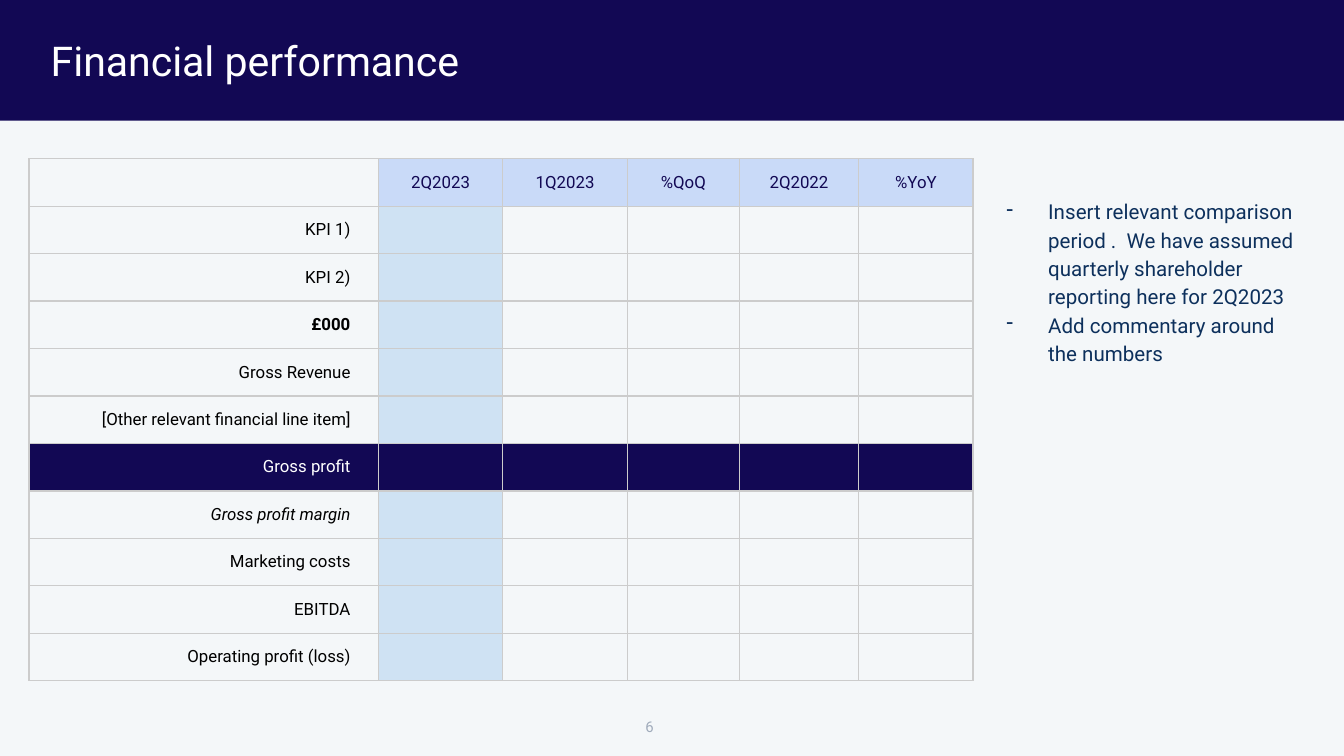
from dataclasses import dataclass

from lxml.etree import SubElement
from pptx import Presentation
from pptx.dml.color import RGBColor
from pptx.enum.shapes import MSO_SHAPE
from pptx.enum.text import MSO_ANCHOR, PP_ALIGN
from pptx.oxml.ns import qn
from pptx.util import Cm, Pt


@dataclass(frozen=True)
class Theme:
    font: str = "Roboto"
    navy: str = "120854"
    panel: str = "F4F7F9"
    white: str = "FFFFFF"
    black: str = "000000"
    note: str = "0D305C"
    muted: str = "A0ABBB"
    header: str = "C9DAF8"
    current: str = "CFE2F3"
    grid: str = "CCCCCC"
    title_size: float = 22
    note_size: float = 11
    table_size: float = 9
    number_size: float = 8


THEME = Theme()

PERIODS = ["2Q2023", "1Q2023", "%QoQ", "2Q2022", "%YoY"]
COL_WIDTHS = [6.6, 2.35, 2.36, 2.11, 2.26, 2.16]
# Label and style of each line item
LINE_ITEMS = [
    ("KPI 1)", ""),
    ("KPI 2)", ""),
    ("£000", "bold"),
    ("Gross Revenue", ""),
    ("[Other relevant financial line item]", ""),
    ("Gross profit", "total"),
    ("Gross profit margin", "italic"),
    ("Marketing costs", ""),
    ("EBITDA", ""),
    ("Operating profit (loss)", ""),
]
COMMENTS = [
    "Insert relevant comparison period .  We have assumed quarterly "
    "shareholder reporting here for 2Q2023",
    "Add commentary around the numbers",
]


def rgb(value):
    return RGBColor.from_string(value)


def add_run(p, text, size, color, bold=False, italic=False):
    r = p.add_run()
    r.text = text
    r.font.name, r.font.size = THEME.font, Pt(size)
    r.font.color.rgb = rgb(color)
    r.font.bold, r.font.italic = bold, italic


def add_text_frame(s, box):
    tf = s.shapes.add_textbox(*map(Cm, box)).text_frame
    tf.word_wrap = True
    tf.margin_left = tf.margin_right = Cm(0.25)
    tf.margin_top = tf.margin_bottom = Cm(0.25)
    return tf


def add_body_panel(s, box):
    sp = s.shapes.add_shape(MSO_SHAPE.RECTANGLE, *map(Cm, box))
    sp.shadow.inherit = False
    sp.fill.solid()
    sp.fill.fore_color.rgb = rgb(THEME.panel)
    sp.line.fill.background()


def add_title(s, box):
    p = add_text_frame(s, box).paragraphs[0]
    add_run(p, "Financial performance", THEME.title_size, THEME.white)


def add_page_number(s, box):
    tf = add_text_frame(s, box)
    tf.vertical_anchor = MSO_ANCHOR.MIDDLE
    p = tf.paragraphs[0]
    p.alignment = PP_ALIGN.CENTER
    add_run(p, "6", THEME.number_size, THEME.muted)


def add_commentary(s, box):
    tf = add_text_frame(s, box)
    for i, comment in enumerate(COMMENTS):
        p = tf.add_paragraph() if i else tf.paragraphs[0]
        p.line_spacing = 1.15
        add_run(p, comment, THEME.note_size, THEME.note)
        # Dash bullet with hanging indent
        pPr = p._p.get_or_add_pPr()
        pPr.set("marL", str(Cm(0.79)))
        pPr.set("indent", str(Cm(-0.79)))
        color = SubElement(pPr, qn("a:buClr"))
        SubElement(color, qn("a:srgbClr"), val=THEME.note)
        SubElement(pPr, qn("a:buChar"), char="-")


def style_cell(cell, fill):
    cell.vertical_anchor = MSO_ANCHOR.MIDDLE
    cell.margin_left = cell.margin_right = Cm(0.53)
    cell.margin_top = cell.margin_bottom = Cm(0.03)
    # Borders precede the fill in the cell properties
    tcPr = cell._tc.get_or_add_tcPr()
    for side in ("lnL", "lnR", "lnT", "lnB"):
        ln = SubElement(tcPr, qn(f"a:{side}"), w=str(Pt(0.75)))
        solid = SubElement(ln, qn("a:solidFill"))
        SubElement(solid, qn("a:srgbClr"), val=THEME.grid)
    if fill:
        cell.fill.solid()
        cell.fill.fore_color.rgb = rgb(fill)
    else:
        cell.fill.background()


def cell_fill(row, col):
    if row == 0:
        return THEME.header if col else None
    if LINE_ITEMS[row - 1][1] == "total":
        return THEME.navy
    return THEME.current if col == 1 else None


def add_performance_table(s, box):
    n_rows, n_cols = len(LINE_ITEMS) + 1, len(COL_WIDTHS)
    table = s.shapes.add_table(n_rows, n_cols, *map(Cm, box)).table
    table.first_row = table.horz_banding = False
    for column, width in zip(table.columns, COL_WIDTHS):
        column.width = Cm(width)
    for i, row in enumerate(table.rows):
        row.height = Cm(box[3] / n_rows)
        for j, cell in enumerate(row.cells):
            style_cell(cell, cell_fill(i, j))

    # Period headings
    for j, period in enumerate(PERIODS, 1):
        p = table.cell(0, j).text_frame.paragraphs[0]
        p.alignment = PP_ALIGN.CENTER
        add_run(p, period, THEME.table_size, THEME.navy)

    # Line item labels
    for i, (label, style) in enumerate(LINE_ITEMS, 1):
        p = table.cell(i, 0).text_frame.paragraphs[0]
        p.alignment = PP_ALIGN.RIGHT
        color = THEME.white if style == "total" else THEME.black
        add_run(p, label, THEME.table_size, color,
                style == "bold", style == "italic")


def main():
    prs = Presentation()
    prs.slide_width, prs.slide_height = Cm(25.4), Cm(14.29)
    s = prs.slides.add_slide(prs.slide_layouts[6])
    s.background.fill.solid()
    s.background.fill.fore_color.rgb = rgb(THEME.navy)

    # Boxes are left, top, width, height in centimetres
    add_body_panel(s, (0, 2.28, 25.4, 12.01))
    add_page_number(s, (6.7, 13.19, 11.15, 1.09))
    add_title(s, (0.71, 0.43, 23.67, 1.6))
    add_commentary(s, (18.77, 3.45, 6.1, 3.68))
    add_performance_table(s, (0.55, 3, sum(COL_WIDTHS), 9.87))
    prs.save("out.pptx")


if __name__ == "__main__":
    main()
